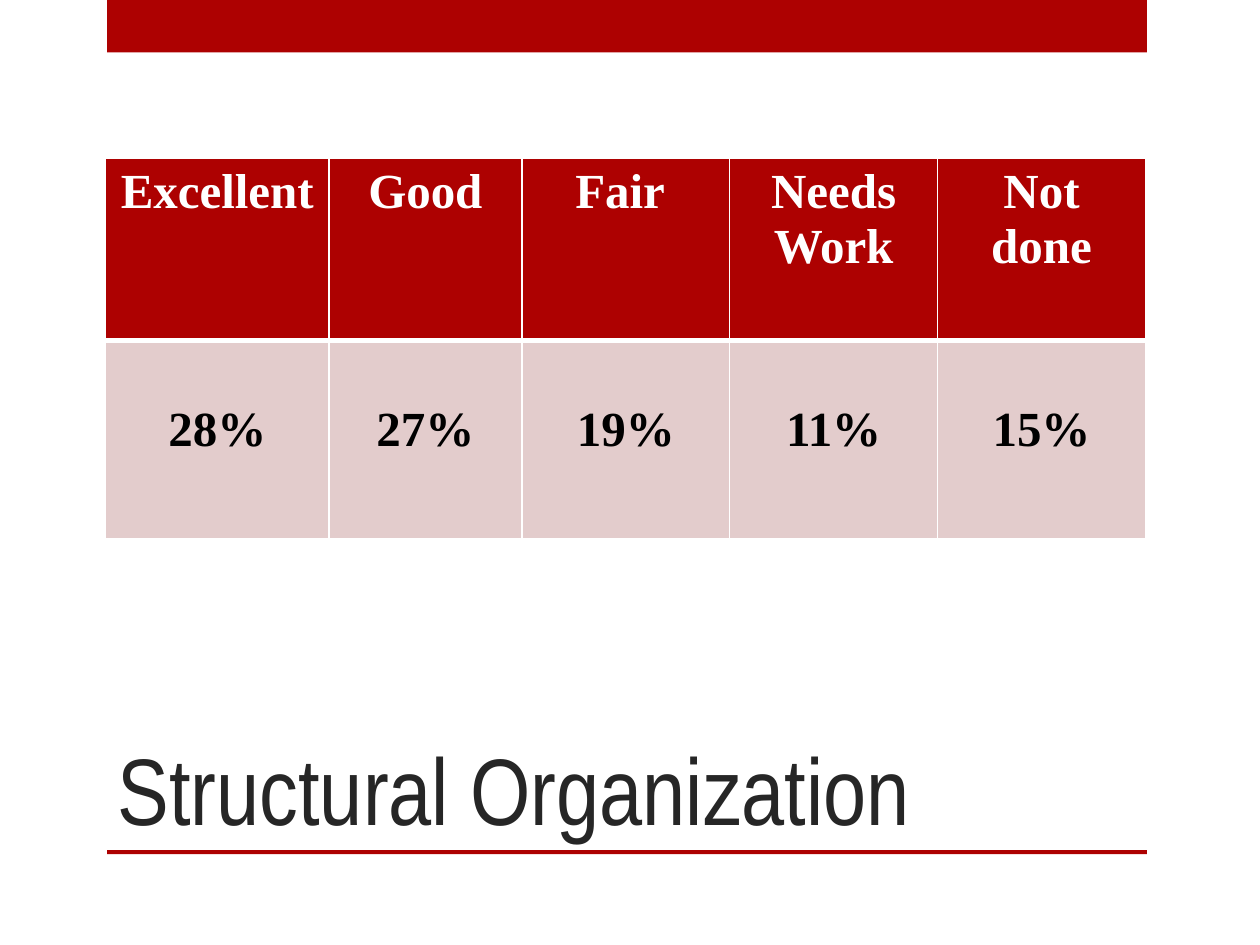
from dataclasses import dataclass

from lxml import etree
from pptx import Presentation
from pptx.dml.color import RGBColor
from pptx.enum import shapes, text
from pptx.oxml import ns
from pptx.util import Cm, Pt


@dataclass(frozen=True)
class Theme:
    accent: RGBColor = RGBColor(0xAD, 0x01, 0x01)
    tint: RGBColor = RGBColor(0xE3, 0xCC, 0xCC)
    paper: RGBColor = RGBColor(0xFF, 0xFF, 0xFF)
    ink: RGBColor = RGBColor(0, 0, 0)
    title_ink: RGBColor = RGBColor(0x26, 0x26, 0x26)
    title_font: str = "Arial Narrow"
    table_font: str = "Times New Roman"
    title_size: Pt = Pt(54)
    table_size: Pt = Pt(28)
    thin_rule: Pt = Pt(1)
    header_rule: Pt = Pt(3)


@dataclass(frozen=True)
class Box:
    left: Cm
    top: Cm
    width: Cm
    height: Cm


@dataclass(frozen=True)
class Rating:
    label: str
    share: str
    width: Cm


@dataclass(frozen=True)
class RowStyle:
    fill: RGBColor
    ink: RGBColor
    margin_top: Cm
    top_rule: Pt
    bottom_rule: Pt


THEME = Theme()
BANDS = [
    Box(Cm(2.16), Cm(0), Cm(20.96), Cm(1.06)),
    Box(Cm(2.16), Cm(17.14), Cm(20.96), Cm(0.08)),
]
TITLE_BOX = Box(Cm(2.12), Cm(12.7), Cm(18.84), Cm(4.45))
TABLE_BOX = Box(Cm(2.13), Cm(3.2), Cm(20.96), Cm(7.66))
RATINGS = [
    Rating("Excellent", "28%", Cm(4.5)),
    Rating("Good", "27%", Cm(3.89)),
    Rating("Fair ", "19%", Cm(4.19)),
    Rating("Needs Work", "11%", Cm(4.19)),
    Rating("Not done", "15%", Cm(4.19)),
]
ROW_HEIGHTS = [Cm(3.66), Cm(4)]
HEADER = RowStyle(THEME.accent, THEME.paper, Cm(0.13),
                  THEME.thin_rule, THEME.header_rule)
SHARES = RowStyle(THEME.tint, THEME.ink, Cm(1.26),
                  THEME.header_rule, THEME.thin_rule)


def add_band(slide, box: Box) -> None:
    band = slide.shapes.add_shape(shapes.MSO_SHAPE.RECTANGLE, box.left,
                                  box.top, box.width, box.height)
    band.shadow.inherit = False
    band.fill.solid()
    band.fill.fore_color.rgb = THEME.accent
    band.line.fill.background()


def format_font(font, name: str, size: Pt, color: RGBColor, bold: bool) -> None:
    font.name, font.size, font.bold = name, size, bold
    font.color.rgb = color


def set_title(slide, wording: str, box: Box) -> None:
    title = slide.shapes.title
    title.left, title.top = box.left, box.top
    title.width, title.height = box.width, box.height
    frame = title.text_frame
    frame.text = wording
    frame.word_wrap = True
    frame.auto_size = text.MSO_AUTO_SIZE.NONE
    frame.vertical_anchor = text.MSO_ANCHOR.BOTTOM
    line = frame.paragraphs[0]
    line.alignment = text.PP_ALIGN.LEFT
    format_font(line.runs[0].font, THEME.title_font, THEME.title_size,
                THEME.title_ink, False)


def set_borders(cell, style: RowStyle) -> None:
    widths = {"lnL": THEME.thin_rule, "lnR": THEME.thin_rule,
              "lnT": style.top_rule, "lnB": style.bottom_rule}
    properties = cell._tc.get_or_add_tcPr()
    # Borders must precede the cell fill
    for position, (side, width) in enumerate(widths.items()):
        border = etree.Element(ns.qn(f"a:{side}"), w=str(int(width)))
        fill = etree.SubElement(border, ns.qn("a:solidFill"))
        etree.SubElement(fill, ns.qn("a:srgbClr"), val=str(THEME.paper))
        properties.insert(position, border)


def fill_cell(cell, wording: str, style: RowStyle) -> None:
    cell.fill.solid()
    cell.fill.fore_color.rgb = style.fill
    cell.margin_top = style.margin_top
    cell.text_frame.text = wording
    line = cell.text_frame.paragraphs[0]
    line.alignment = text.PP_ALIGN.CENTER
    format_font(line.runs[0].font, THEME.table_font, THEME.table_size,
                style.ink, True)
    set_borders(cell, style)


def add_ratings(slide, box: Box, ratings: list[Rating]) -> None:
    table = slide.shapes.add_table(len(ROW_HEIGHTS), len(ratings), box.left,
                                   box.top, box.width, box.height).table
    for row, height in zip(table.rows, ROW_HEIGHTS):
        row.height = height
    for column, rating in enumerate(ratings):
        table.columns[column].width = rating.width
        fill_cell(table.cell(0, column), rating.label, HEADER)
        fill_cell(table.cell(1, column), rating.share, SHARES)


def main() -> None:
    deck = Presentation()
    deck.slide_width, deck.slide_height = Cm(25.4), Cm(19.05)
    slide = deck.slides.add_slide(deck.slide_layouts[5])

    # Red bands at the top and below the title
    for band in BANDS:
        add_band(slide, band)

    # Title and rating table
    set_title(slide, "Structural Organization", TITLE_BOX)
    add_ratings(slide, TABLE_BOX, RATINGS)
    deck.save("out.pptx")


if __name__ == "__main__":
    main()
